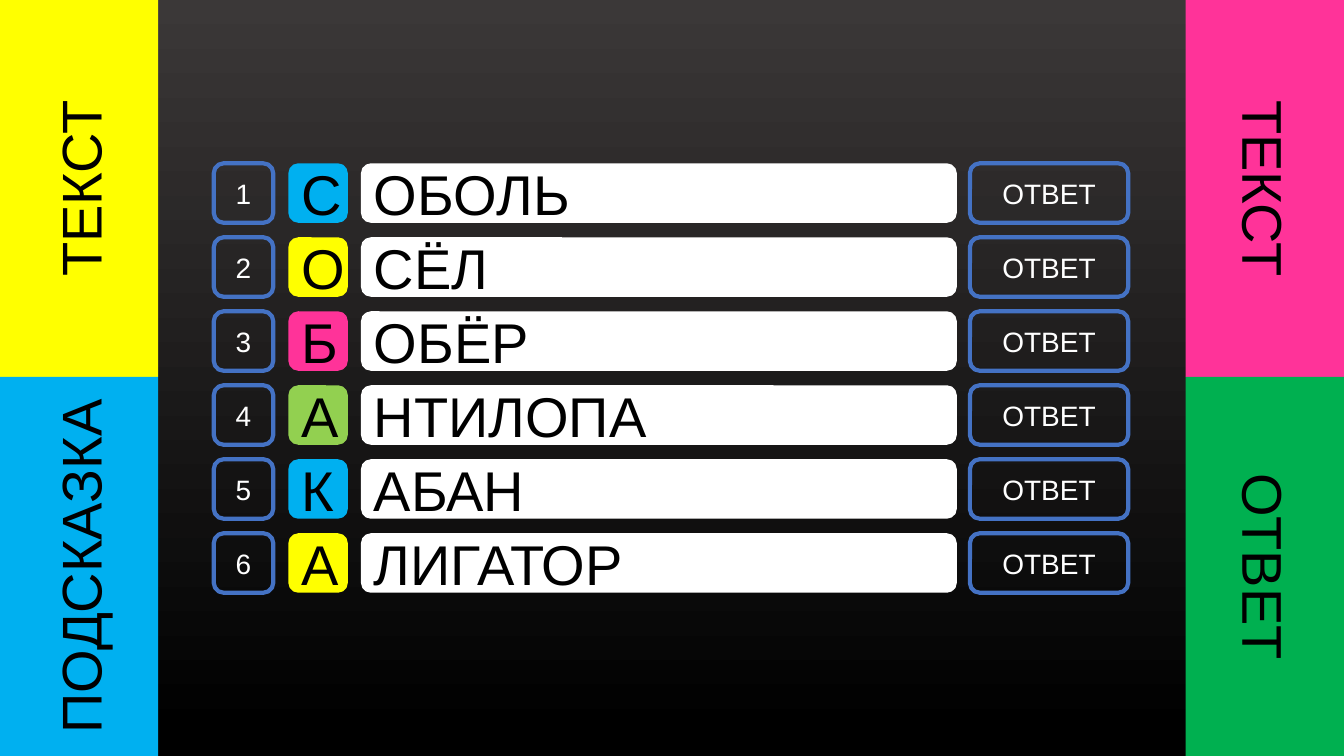
import pptx
import pptx.util
import pptx.dml.color
import pptx.enum.shapes
import pptx.enum.text

Inches = pptx.util.Inches
RGBColor = pptx.dml.color.RGBColor
ALIGN = pptx.enum.text.PP_ALIGN
SHAPE = pptx.enum.shapes.MSO_SHAPE

BLACK = RGBColor(0x00, 0x00, 0x00)
CHARCOAL = RGBColor(0x3B, 0x38, 0x38)
WHITE = RGBColor(0xFF, 0xFF, 0xFF)
YELLOW = RGBColor(0xFF, 0xFF, 0x00)
SKY = RGBColor(0x00, 0xB0, 0xF0)
PINK = RGBColor(0xFF, 0x33, 0x99)
LIME = RGBColor(0x92, 0xD0, 0x50)
GREEN = RGBColor(0x00, 0xB0, 0x50)
BLUE = RGBColor(0x44, 0x72, 0xC4)

WIDTH, HEIGHT = 13.33, 7.5
SIDE = 1.57
SPLIT = 3.74
TILE = 0.59
FIRST_ROW, LAST_ROW = 1.62, 5.29
NUMBER_X, LETTER_X, WORD_X, ANSWER_X = 2.12, 2.86, 3.58, 9.62
WORD_WIDTH = 5.91

NO_MARGINS = {"margin_left": 0, "margin_right": 0, "margin_top": 0, "margin_bottom": 0}

deck = pptx.Presentation()
deck.slide_width, deck.slide_height = Inches(WIDTH), Inches(HEIGHT)
slide = deck.slides.add_slide(deck.slide_layouts[6])

backdrop = slide.background.fill
backdrop.gradient()
backdrop.gradient_angle = 270
for stop, (position, shade) in zip(backdrop.gradient_stops, [(0, CHARCOAL), (0.97, BLACK)]):
    stop.position = position
    stop.color.rgb = shade


def add_block(kind, box, caption, fill=None, align=ALIGN.CENTER, tight=False):
    block = slide.shapes.add_shape(kind, *[Inches(length) for length in box])
    block.shadow.inherit = False
    if fill is None:
        block.fill.background()
        block.line.color.rgb = BLUE
        block.line.width = pptx.util.Pt(3)
    else:
        block.fill.solid()
        block.fill.fore_color.rgb = fill
        block.line.fill.background()
    frame = block.text_frame
    frame_format = {"word_wrap": True, "vertical_anchor": pptx.enum.text.MSO_ANCHOR.MIDDLE}
    if tight:
        frame_format.update(NO_MARGINS)
    for name, value in frame_format.items():
        setattr(frame, name, value)
    paragraph = frame.paragraphs[0]
    paragraph.alignment = align
    run = paragraph.add_run()
    run.text = caption
    font_format = {"name": "Arial", "size": pptx.util.Pt(20 if fill is None else 40)}
    for name, value in font_format.items():
        setattr(run.font, name, value)
    run.font.color.rgb = WHITE if fill is None else BLACK
    return block


animals = [
    ("С", "ОБОЛЬ", SKY),
    ("О", "СЁЛ", YELLOW),
    ("Б", "ОБЁР", PINK),
    ("А", "НТИЛОПА", LIME),
    ("К", "АБАН", SKY),
    ("А", "ЛИГАТОР", YELLOW),
]
pitch = (LAST_ROW - FIRST_ROW) / (len(animals) - 1)
for row, (letter, ending, colour) in enumerate(animals):
    top = FIRST_ROW + row * pitch
    add_block(SHAPE.ROUNDED_RECTANGLE, (NUMBER_X, top, TILE, TILE), str(row + 1), tight=True)
    add_block(SHAPE.ROUNDED_RECTANGLE, (LETTER_X, top, TILE, TILE), letter, colour)
    add_block(SHAPE.ROUNDED_RECTANGLE, (WORD_X, top, WORD_WIDTH, TILE), ending, WHITE, ALIGN.LEFT)
    add_block(SHAPE.ROUNDED_RECTANGLE, (ANSWER_X, top, SIDE, TILE), "ОТВЕТ", tight=True)

upper, lower = (0, SPLIT), (SPLIT, HEIGHT - SPLIT)
side_panels = [
    (0, upper, "ТЕКСТ", YELLOW, "vert270", False),
    (0, lower, "ПОДСКАЗКА", SKY, "vert270", False),
    (WIDTH - SIDE, upper, "ТЕКСТ", PINK, "vert", False),
    (WIDTH - SIDE, lower, "ОТВЕТ", GREEN, "vert", True),
]
for left, (top, height), caption, colour, direction, tight in side_panels:
    panel = add_block(SHAPE.RECTANGLE, (left, top, SIDE, height), caption, colour, tight=tight)
    panel.element.txBody.bodyPr.set("vert", direction)

deck.save("out.pptx")
